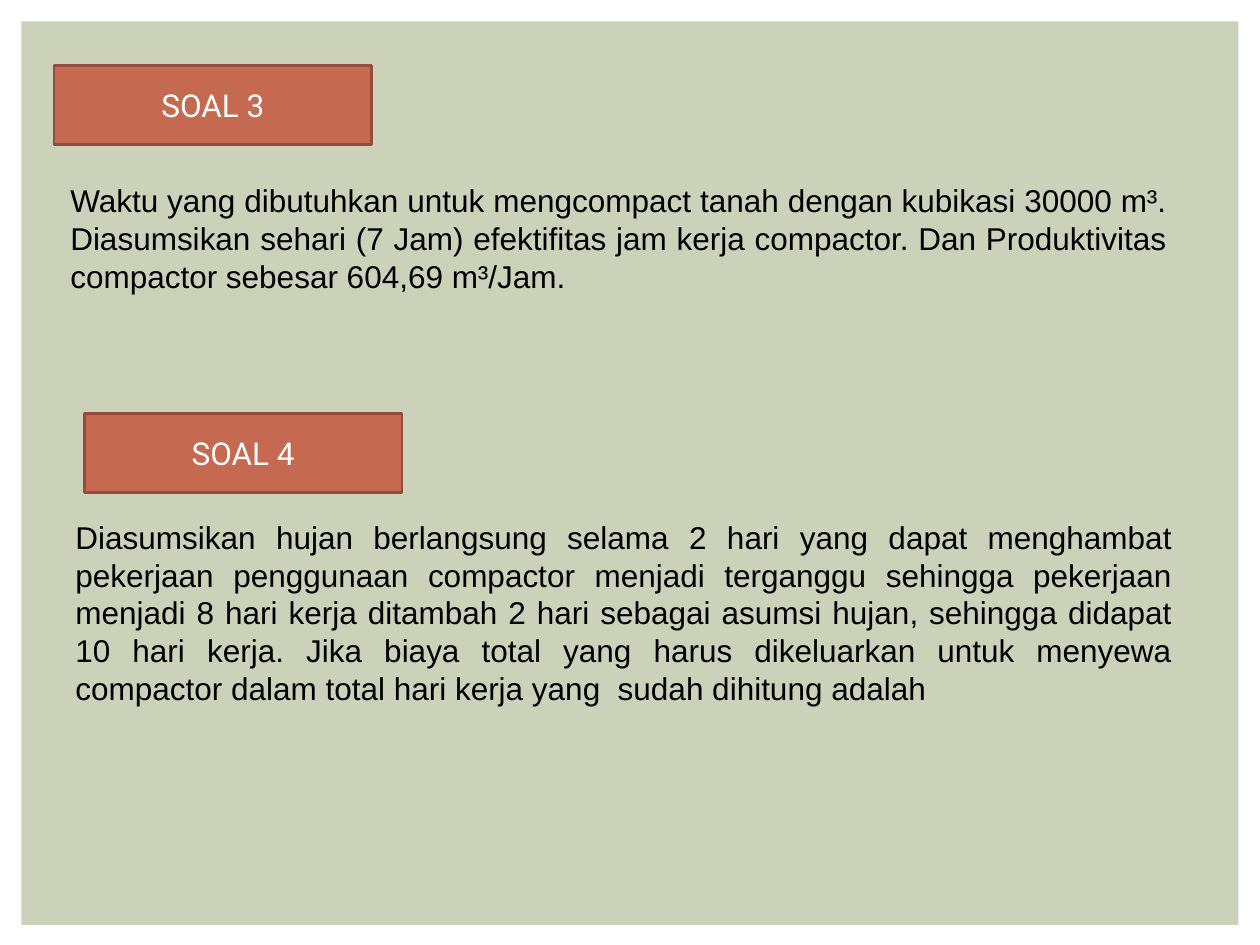
import dataclasses

import pptx
import pptx.dml.color
import pptx.enum.shapes
import pptx.enum.text
import pptx.util

COLUMNS, ROWS = 100, 75
ALIGN = pptx.enum.text.PP_ALIGN
ANCHOR = pptx.enum.text.MSO_ANCHOR

deck = pptx.Presentation()
deck.slide_width = pptx.util.Inches(10)
deck.slide_height = pptx.util.Inches(7.5)


@dataclasses.dataclass(frozen=True)
class Area:
    column: float
    row: float
    columns: float
    rows: float

    def lengths(self) -> tuple[int, int, int, int]:
        across = deck.slide_width / COLUMNS
        down = deck.slide_height / ROWS
        return (round(self.column * across), round(self.row * down),
                round(self.columns * across), round(self.rows * down))


@dataclasses.dataclass(frozen=True)
class Question:
    label: str
    label_column: float
    label_row: float
    problem: str
    problem_area: Area


QUESTIONS = [
    Question(
        "SOAL 3", 4.3, 5.2,
        "Waktu yang dibutuhkan untuk mengcompact tanah dengan kubikasi 30000 m³. "
        "Diasumsikan sehari (7 Jam) efektifitas jam kerja compactor. "
        "Dan Produktivitas compactor sebesar 604,69 m³/Jam.",
        Area(4.6, 13.9, 89, 10.1)),
    Question(
        "SOAL 4", 6.7, 32.8,
        "Diasumsikan hujan berlangsung selama 2 hari yang dapat menghambat "
        "pekerjaan penggunaan compactor menjadi terganggu sehingga pekerjaan "
        "menjadi 8 hari kerja ditambah 2 hari sebagai asumsi hujan, sehingga "
        "didapat 10 hari kerja. Jika biaya total yang harus dikeluarkan untuk "
        "menyewa compactor dalam total hari kerja yang  sudah dihitung adalah",
        Area(5, 40.6, 89, 16.2)),
]


def rgb(value: str) -> pptx.dml.color.RGBColor:
    return pptx.dml.color.RGBColor.from_string(value)


def write(frame, text: str, *, font: str, color: str, align, anchor,
          size: float = 18) -> None:
    frame.word_wrap = True
    frame.vertical_anchor = anchor
    paragraph = frame.paragraphs[0]
    paragraph.alignment = align
    run = paragraph.add_run()
    run.text = text
    run.font.name = font
    run.font.size = pptx.util.Pt(size)
    run.font.color.rgb = rgb(color)


def draw_panel(slide, area: Area, fill: str, border: str | None = None):
    panel = slide.shapes.add_shape(
        pptx.enum.shapes.MSO_SHAPE.RECTANGLE, *area.lengths())
    panel.shadow.inherit = False
    panel.fill.solid()
    panel.fill.fore_color.rgb = rgb(fill)
    if border:
        panel.line.color.rgb = rgb(border)
        panel.line.width = pptx.util.Pt(1.5)
    else:
        panel.line.fill.background()
    return panel


def draw_question(slide, question: Question) -> None:
    label_area = Area(question.label_column, question.label_row, 25.2, 6.3)
    label = draw_panel(slide, label_area, "C66951", "924E3C")
    write(label.text_frame, question.label, font="Roboto", color="FFFFFF",
          align=ALIGN.CENTER, anchor=ANCHOR.MIDDLE)
    problem = slide.shapes.add_textbox(*question.problem_area.lengths())
    write(problem.text_frame, question.problem, font="Arial", color="000000",
          align=ALIGN.JUSTIFY, anchor=ANCHOR.TOP)
    problem.text_frame.auto_size = pptx.enum.text.MSO_AUTO_SIZE.SHAPE_TO_FIT_TEXT


def main() -> None:
    slide = deck.slides.add_slide(deck.slide_layouts.get_by_name("Blank"))
    slide.background.fill.solid()
    slide.background.fill.fore_color.rgb = rgb("FFFFFF")
    draw_panel(slide, Area(1.7, 1.7, 96.6, 71.7), "CCD1B9")
    for question in QUESTIONS:
        draw_question(slide, question)
    deck.save("out.pptx")


if __name__ == "__main__":
    main()
